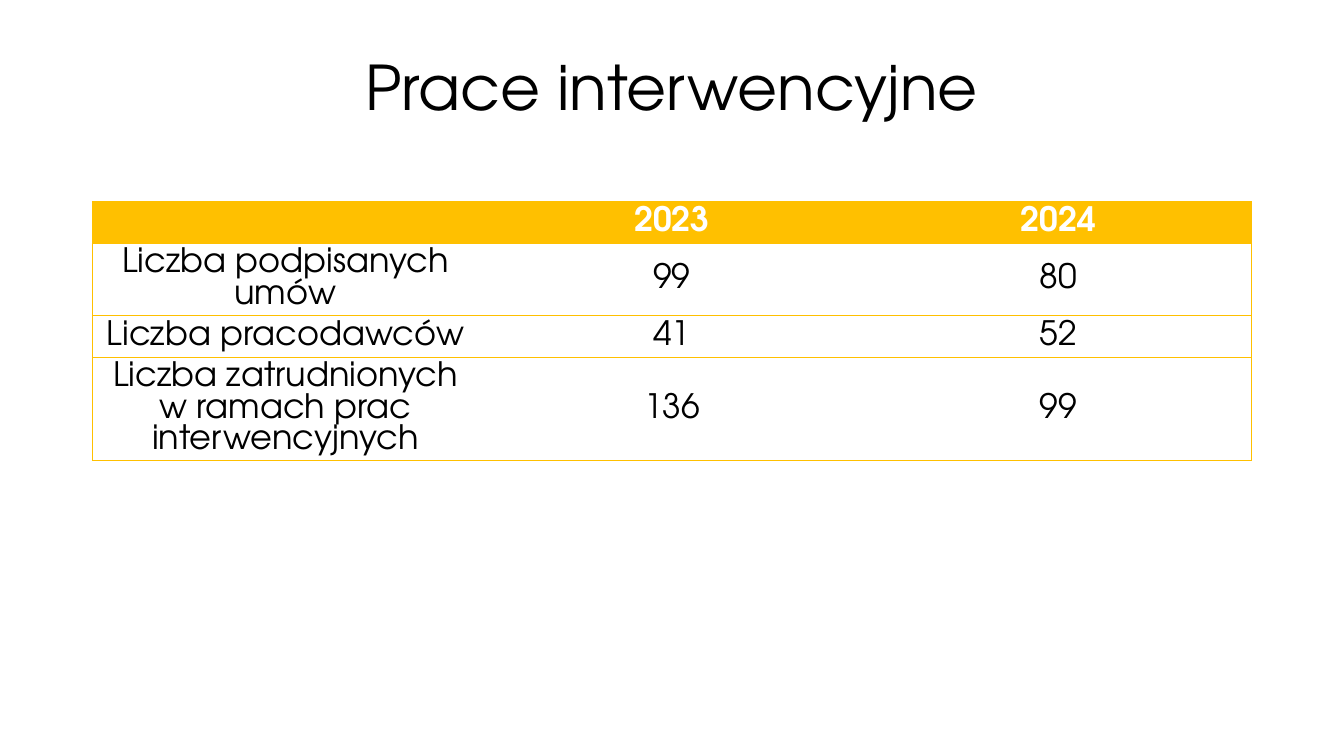
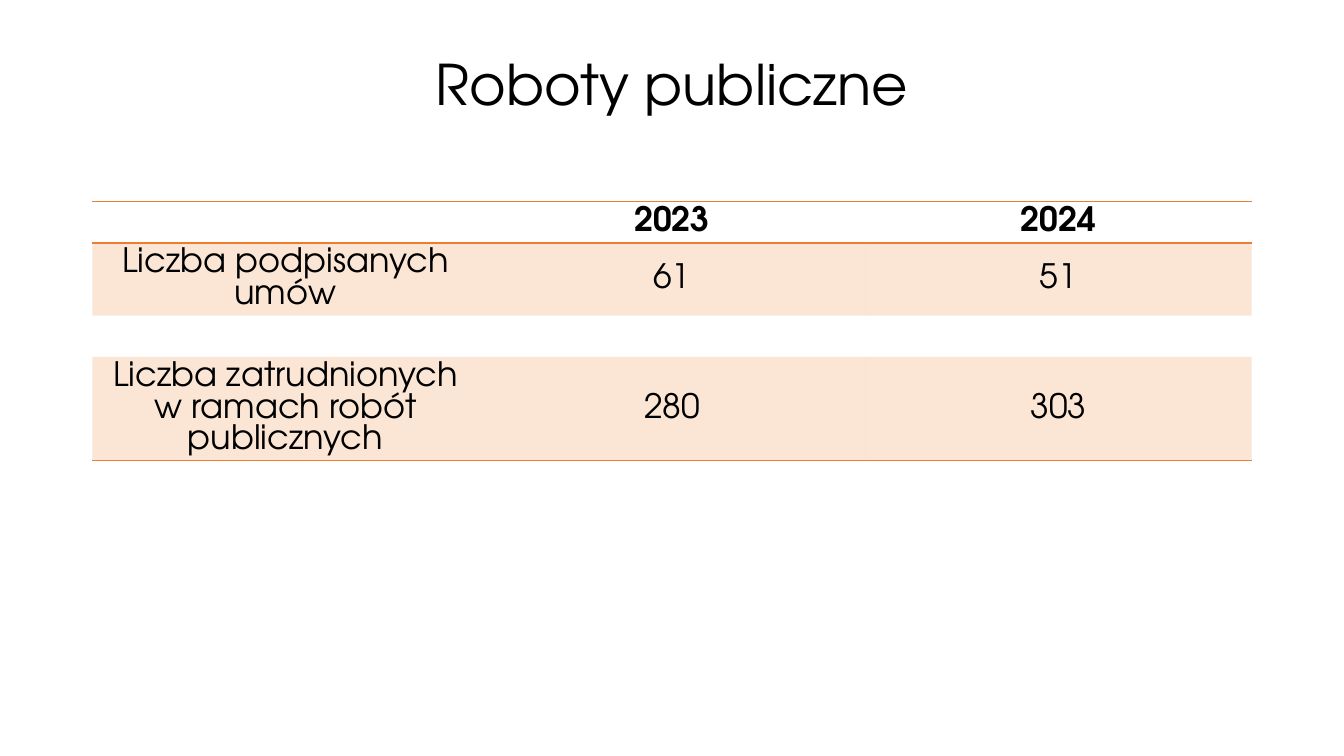
from dataclasses import dataclass
from typing import Optional

from lxml.etree import SubElement
from pptx import Presentation
from pptx.dml.color import RGBColor
from pptx.enum.text import MSO_ANCHOR, PP_ALIGN
from pptx.oxml.ns import qn
from pptx.slide import Slide
from pptx.table import _Cell
from pptx.util import Inches, Pt

PLAIN_TABLE_STYLE = "{2D5ABB26-0587-4C30-8999-92F81FD0307C}"
SLIDE_WIDTH, SLIDE_HEIGHT = 13.33, 7.5
CONTENT_WIDTH = 11.5
CONTENT_LEFT = (SLIDE_WIDTH - CONTENT_WIDTH) / 2
TITLE_TOP, TABLE_TOP = 0.4, 2
TITLE_PADDING = 0.34
ROW_HEIGHTS = (0.41, 0.72, 0.41, 1.03)


@dataclass(frozen=True)
class Theme:
    font: str = "TeX Gyre Adventor"
    text: str = "000000"
    light: str = "FFFFFF"
    gold: str = "FFC000"
    orange: str = "ED7D31"
    band_opacity: int = 20
    line_height: float = 0.93
    table_size: int = 24


THEME = Theme()


@dataclass(frozen=True)
class TableLook:
    accent: str
    header_text: str
    header_fill: Optional[str]
    banded: bool
    side_lines: bool
    row_lines: tuple[int, ...]
    line_width: float


@dataclass(frozen=True)
class TableSlide:
    title: str
    title_size: int
    look: TableLook
    rows: tuple[tuple[str, ...], ...]


FRAMED = TableLook(THEME.gold, THEME.light, THEME.gold, False, True, (0, 1, 2, 3, 4), 0.5)
BANDED = TableLook(THEME.orange, THEME.text, None, True, False, (0, 1, 4), 1)
HEADER = ("", "2023", "2024")

SLIDES = (
    TableSlide("Prace interwencyjne", 44, FRAMED, (
        HEADER,
        ("Liczba podpisanych umów", "99", "80"),
        ("Liczba pracodawców", "41", "52"),
        ("Liczba zatrudnionych w ramach prac interwencyjnych", "136", "99"),
    )),
    TableSlide("Roboty publiczne", 40, BANDED, (
        HEADER,
        ("Liczba podpisanych umów", "61", "51"),
        ("", "", ""),
        ("Liczba zatrudnionych w ramach robót publicznych", "280", "303"),
    )),
)


def write_centred(frame, text: str, size: int, color: str, bold: bool = False) -> None:
    frame.word_wrap = True
    para = frame.paragraphs[0]
    para.text = text
    para.alignment = PP_ALIGN.CENTER
    for span in para.runs:
        span.font.name = THEME.font
        span.font.size = Pt(size)
        span.font.bold = bold
        span.font.color.rgb = RGBColor.from_string(color)


def add_title(slide: Slide, title: str, size: int) -> None:
    """Add a title box whose height follows its type size."""
    height = TITLE_PADDING + size * THEME.line_height / 72
    box = slide.shapes.add_textbox(Inches(CONTENT_LEFT), Inches(TITLE_TOP),
                                   Inches(CONTENT_WIDTH), Inches(height))
    box.text_frame.vertical_anchor = MSO_ANCHOR.MIDDLE
    write_centred(box.text_frame, title, size, THEME.text)


def draw_borders(cell: _Cell, look: TableLook, row: int, column: int, last_column: int) -> None:
    sides = {
        "L": look.side_lines and column == 0,
        "R": look.side_lines and column == last_column,
        "T": row in look.row_lines,
        "B": row + 1 in look.row_lines,
    }
    properties = cell._tc.get_or_add_tcPr()
    for side, visible in sides.items():
        line = SubElement(properties, qn(f"a:ln{side}"), w=str(Pt(look.line_width)))
        if visible:
            fill = SubElement(line, qn("a:solidFill"))
            SubElement(fill, qn("a:srgbClr"), val=look.accent)
        else:
            SubElement(line, qn("a:noFill"))


def fill_cell(cell: _Cell, look: TableLook, row: int) -> None:
    if row == 0 and look.header_fill:
        cell.fill.solid()
        cell.fill.fore_color.rgb = RGBColor.from_string(look.header_fill)
    elif look.banded and row % 2:
        cell.fill.solid()
        cell.fill.fore_color.rgb = RGBColor.from_string(look.accent)
        color = cell._tc.tcPr.find(qn("a:solidFill")).find(qn("a:srgbClr"))
        SubElement(color, qn("a:alpha"), val=str(THEME.band_opacity * 1000))
    else:
        cell.fill.background()


def add_data_table(slide: Slide, rows: tuple[tuple[str, ...], ...], look: TableLook) -> None:
    column_count = len(rows[0])
    table = slide.shapes.add_table(
        len(rows), column_count, Inches(CONTENT_LEFT), Inches(TABLE_TOP),
        Inches(CONTENT_WIDTH), Inches(sum(ROW_HEIGHTS))).table
    table.first_row = table.horz_banding = False
    table._tbl.tblPr.find(qn("a:tableStyleId")).text = PLAIN_TABLE_STYLE
    for table_row, height in zip(table.rows, ROW_HEIGHTS):
        table_row.height = Inches(height)
    line_spacing = Pt(round(THEME.table_size * THEME.line_height, 1))
    for row, values in enumerate(rows):
        is_header = row == 0
        for column, value in enumerate(values):
            cell = table.cell(row, column)
            cell.vertical_anchor = MSO_ANCHOR.MIDDLE
            draw_borders(cell, look, row, column, column_count - 1)
            fill_cell(cell, look, row)
            color = look.header_text if is_header else THEME.text
            write_centred(cell.text_frame, value, THEME.table_size, color, is_header)
            cell.text_frame.paragraphs[0].line_spacing = line_spacing


def main() -> None:
    deck = Presentation()
    deck.slide_width, deck.slide_height = Inches(SLIDE_WIDTH), Inches(SLIDE_HEIGHT)
    for content in SLIDES:
        page = deck.slides.add_slide(deck.slide_layouts[6])
        add_title(page, content.title, content.title_size)
        add_data_table(page, content.rows, content.look)
    deck.save("out.pptx")


if __name__ == "__main__":
    main()
